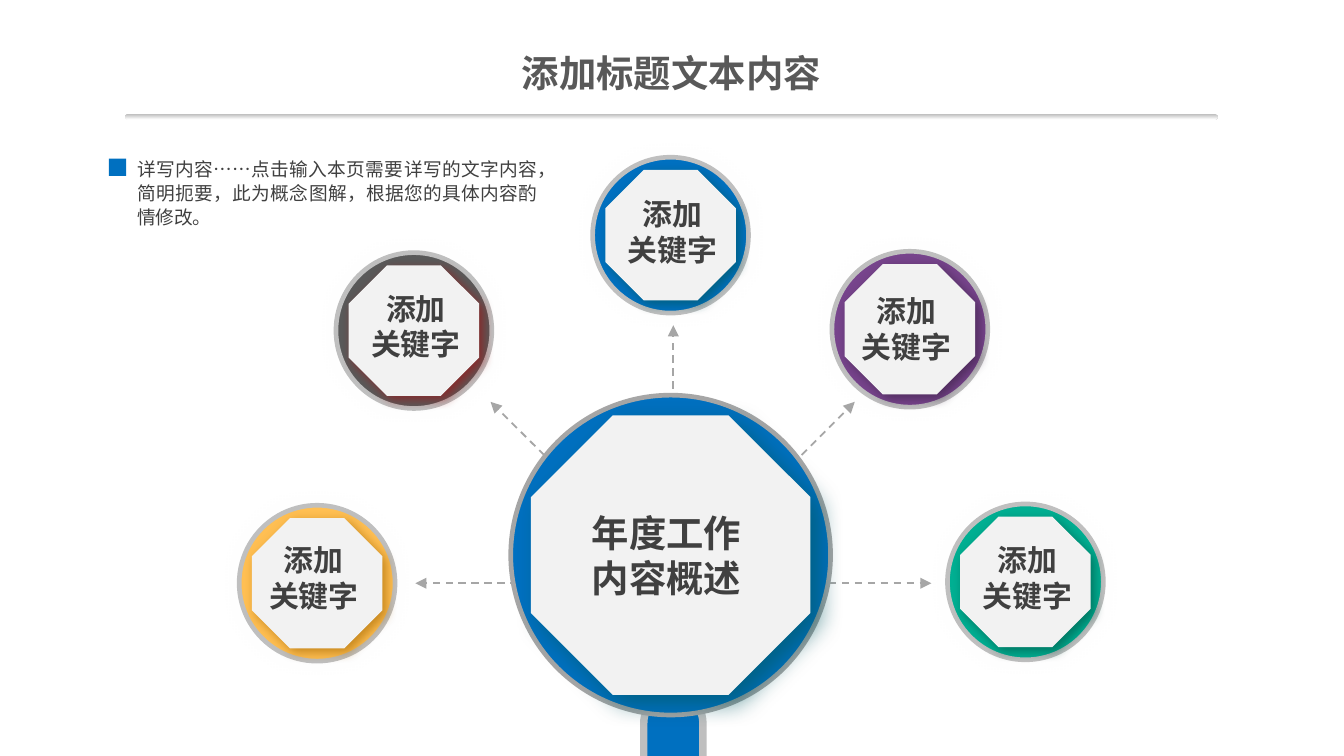
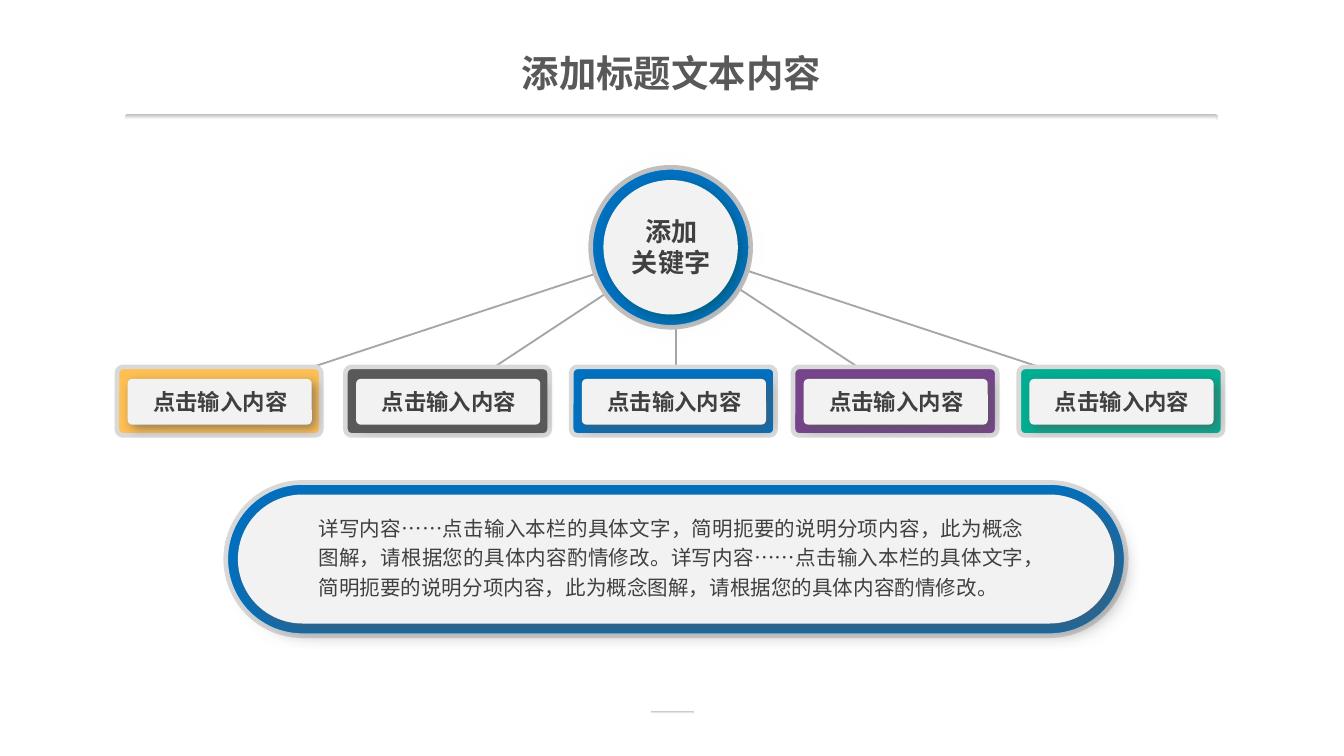
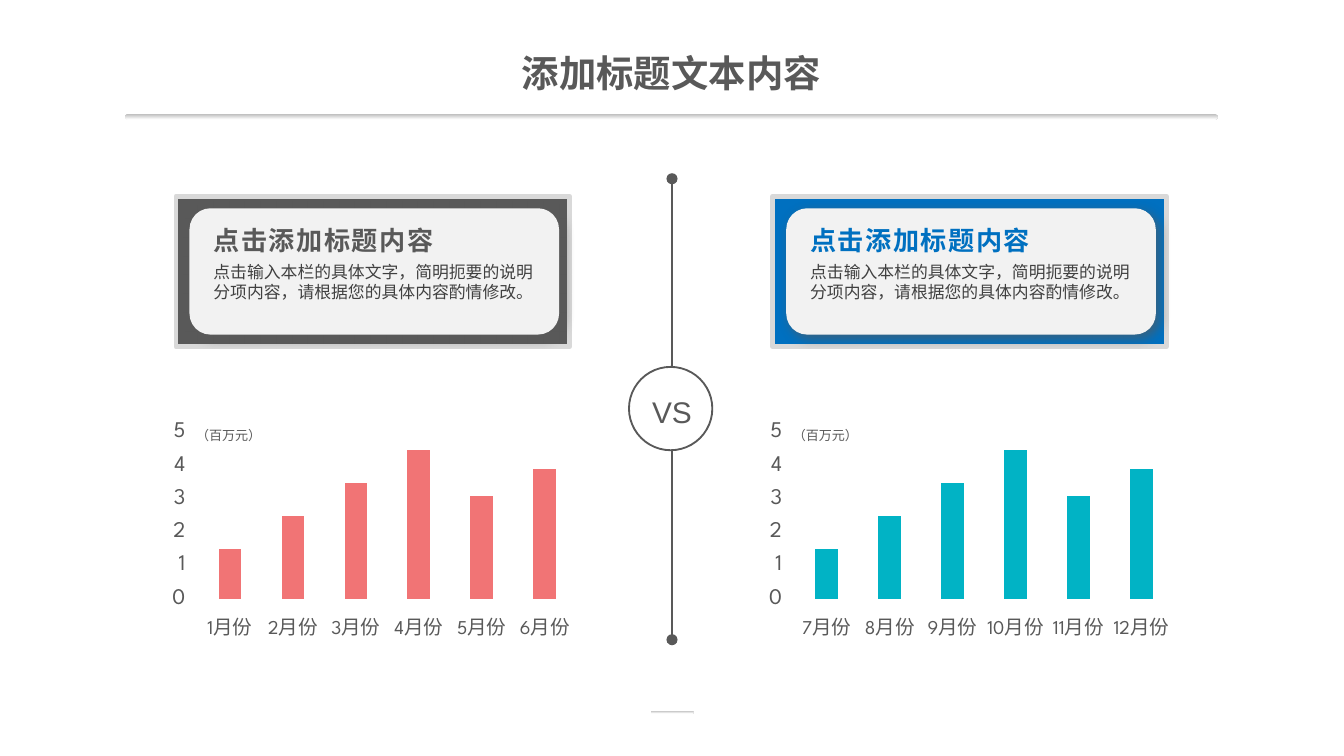
from lxml import etree
from pptx import Presentation
from pptx.chart.data import CategoryChartData
from pptx.dml.color import RGBColor
from pptx.enum.chart import XL_CHART_TYPE
from pptx.enum.dml import MSO_LINE
from pptx.enum.shapes import MSO_CONNECTOR, MSO_SHAPE
from pptx.enum.text import MSO_ANCHOR, MSO_AUTO_SIZE, PP_ALIGN
from pptx.oxml.ns import qn
from pptx.util import Inches, Pt

OVAL, OCTAGON = MSO_SHAPE.OVAL, MSO_SHAPE.OCTAGON
RECT, ROUND = MSO_SHAPE.RECTANGLE, MSO_SHAPE.ROUNDED_RECTANGLE
LEFT, CENTER, JUSTIFY = PP_ALIGN.LEFT, PP_ALIGN.CENTER, PP_ALIGN.JUSTIFY
TOP, MIDDLE = MSO_ANCHOR.TOP, MSO_ANCHOR.MIDDLE
STRAIGHT = MSO_CONNECTOR.STRAIGHT
DASH = MSO_LINE.DASH
COLUMN = XL_CHART_TYPE.COLUMN_CLUSTERED

WHITE = RGBColor(0xFF, 0xFF, 0xFF)
PAPER = RGBColor(0xF2, 0xF2, 0xF2)
PALE = RGBColor(0xD9, 0xD9, 0xD9)
SILVER = RGBColor(0xBF, 0xBF, 0xBF)
GREY = RGBColor(0xA6, 0xA6, 0xA6)
DARK = RGBColor(0x59, 0x59, 0x59)
INK = RGBColor(0x40, 0x40, 0x40)
BLUE = RGBColor(0x00, 0x70, 0xC0)
AMBER = RGBColor(0xFF, 0xBF, 0x53)
PURPLE = RGBColor(0x77, 0x44, 0x8C)
GREEN = RGBColor(0x00, 0xAF, 0x92)
CORAL = RGBColor(0xF1, 0x74, 0x75)
CYAN = RGBColor(0x01, 0xB3, 0xC5)
NAVY_SHADE = RGBColor(0x00, 0x59, 0x62)
AMBER_SHADE = RGBColor(0xA9, 0x6A, 0x00)
RED_SHADE = RGBColor(0xA2, 0x10, 0x11)
PURPLE_SHADE = RGBColor(0x3C, 0x22, 0x46)
GREEN_SHADE = RGBColor(0x00, 0x58, 0x49)
FADE_OUT = [SILVER, WHITE]
FADE_IN = [WHITE, SILVER]
CJK, LATIN, DIGITS = "Noto Sans CJK SC", "Arial", "League Spartan"


def add_shape(s, kind, x, y, w, h, fill, line=None, width=2.5, adj=None, shade=None, blur=6, soft=None):
    sp = s.shapes.add_shape(kind, Inches(x), Inches(y), Inches(w), Inches(h))
    sp.shadow.inherit = False
    if adj is not None:
        sp.adjustments[0] = adj
    if fill is None:
        sp.fill.background()
    elif isinstance(fill, list):
        sp.fill.gradient()
        sp.fill.gradient_angle = 270
        for stop, color in zip(sp.fill.gradient_stops, fill):
            stop.color.rgb = color
    else:
        sp.fill.solid()
        sp.fill.fore_color.rgb = fill
    if line is None:
        sp.line.fill.background()
    else:
        sp.line.color.rgb = line
        sp.line.width = Pt(width)
    effects = sp._element.spPr.find(qn("a:effectLst"))
    if shade is not None:
        outer = etree.SubElement(effects, qn("a:outerShdw"), blurRad=str(Pt(blur)),
                                 dist=str(Pt(blur / 2)), dir="2700000", algn="tl", rotWithShape="0")
        color = etree.SubElement(outer, qn("a:srgbClr"), val=str(shade))
        etree.SubElement(color, qn("a:alpha"), val="64000")
    if soft is not None:
        etree.SubElement(effects, qn("a:softEdge"), rad=str(Inches(soft)))
    return sp


def set_text(sp, lines, size, color=INK, font=CJK, bold=False, align=CENTER, anchor=TOP,
             inset=(0.1, 0.05), spacing=None, tracking=None):
    tf = sp.text_frame
    tf.word_wrap = True
    tf.auto_size = MSO_AUTO_SIZE.NONE
    tf.vertical_anchor = anchor
    tf.margin_left = tf.margin_right = Inches(inset[0])
    tf.margin_top = tf.margin_bottom = Inches(inset[1])
    tf.text = lines
    for p in tf.paragraphs:
        p.alignment = align
        if spacing is not None:
            p.line_spacing = spacing
        p.font.size = Pt(size)
        p.font.bold = bold
        p.font.name = font
        p.font.color.rgb = color
        props = p._p.pPr.find(qn("a:defRPr"))
        etree.SubElement(props, qn("a:ea"), typeface=CJK)
        if tracking is not None:
            props.set("spc", str(tracking))


prs = Presentation()
prs.slide_width = Inches(10)
prs.slide_height = prs.slide_width * 9 // 16

slides = []
for i in range(3):
    s = prs.slides.add_slide(prs.slide_layouts[5])
    slides.append(s)
    title = s.shapes.title
    title.left, title.top, title.width, title.height = Inches(3.07), Inches(0.33), Inches(3.85), Inches(0.41)
    set_text(title, "添加标题文本内容", 20, DARK, LATIN, True, inset=(0.07, 0.04))
    add_shape(s, ROUND, 0.93, 0.85, 8.13, 0.04, FADE_OUT, adj=0.5)
    if i > 0:
        add_shape(s, ROUND, 4.84, 5.29, 0.32, 0.02, FADE_OUT, adj=0.5)
overview, tree, versus = slides

lines = [(overview, 5.01, 4.34, x, y, GREY, DASH, "triangle")
         for x, y in [(3.09, 4.34), (6.93, 4.34), (5.01, 2.42), (3.65, 2.99), (6.36, 2.99)]]
lines += [(tree, 5.03, 1.84, 1.63 + 1.7 * i, 2.96, GREY, None, None) for i in range(5)]
lines += [(versus, 5, y1, 5, y2, DARK, None, "oval") for y1, y2 in [(2.73, 1.33), (3.35, 4.76)]]
for s, x1, y1, x2, y2, color, dash, tail in lines:
    line = s.shapes.add_connector(STRAIGHT, Inches(x1), Inches(y1), Inches(x2), Inches(y2))
    line.line.color.rgb = color
    line.line.width = Pt(1)
    if dash:
        line.line.dash_style = dash
    if tail:
        etree.SubElement(line.line._get_or_add_ln(), qn("a:tailEnd"), type=tail)
    etree.SubElement(line._element.spPr, qn("a:effectLst"))

discs = [
    (overview, 2.36, 4.34, AMBER, AMBER_SHADE, 1.85, 3.97),
    (overview, 3.08, 2.46, DARK, RED_SHADE, 2.61, 2.1),
    (overview, 4.99, 1.75, BLUE, NAVY_SHADE, 4.52, 1.4),
    (overview, 6.77, 2.45, PURPLE, PURPLE_SHADE, 6.26, 2.12),
    (overview, 7.63, 4.33, GREEN, GREEN_SHADE, 7.16, 3.97),
    (tree, 4.99, 1.84, BLUE, NAVY_SHADE, 4.51, 1.54),
]
for s, cx, cy, color, shade, label_x, label_y in discs:
    halo, ring, core, kind, size = (1.6, 1.16, 0.97, OCTAGON, 16) if s is overview else (1.65, 1.19, 1, OVAL, 14)
    add_shape(s, OVAL, cx - halo / 2, cy - halo / 2, halo, halo, FADE_IN, soft=0.35)
    add_shape(s, OVAL, cx - ring / 2, cy - ring / 2, ring, ring, color, SILVER)
    add_shape(s, kind, cx - core / 2, cy - core / 2, core, core, PAPER, shade=shade)
    label = s.shapes.add_textbox(Inches(label_x), Inches(label_y), Inches(0.97), Inches(0.66))
    set_text(label, "添加\n关键字", size, bold=True, inset=(0.1, 0.06))

handle = add_shape(overview, ROUND, 4.45, 5.5, 1.12, 0.44, BLUE, SILVER, 4, 0.5)
handle.rotation = 90
add_shape(overview, OVAL, 3.8, 2.94, 2.38, 2.38, BLUE, GREY)
add_shape(overview, OCTAGON, 3.95, 3.09, 2.08, 2.08, PAPER, shade=NAVY_SHADE, blur=13)
center = overview.shapes.add_textbox(Inches(4.07), Inches(3.75), Inches(1.78), Inches(0.77))
set_text(center, "年度工作\n内容概述", 20, bold=True)
add_shape(overview, RECT, 0.81, 1.18, 0.13, 0.13, BLUE)
note = overview.shapes.add_textbox(Inches(1.02), Inches(1.16), Inches(2.98), Inches(0.55))
set_text(note, "详写内容……点击输入本页需要详写的文字内容，简明扼要，此为概念图解，根据您的具体内容酌情修改。",
         10, align=JUSTIFY, inset=(0, 0), spacing=Pt(13))

cards = [(0.87, AMBER), (2.57, DARK), (4.25, BLUE), (5.9, PURPLE), (7.58, GREEN)]
for left, color in cards:
    add_shape(tree, ROUND, left, 2.73, 1.52, 0.51, color, PALE, adj=0.09)
    add_shape(tree, ROUND, left + 0.08, 2.82, 1.37, 0.34, PAPER, adj=0.1, shade=DARK)
    label = tree.shapes.add_textbox(Inches(left), Inches(2.83), Inches(1.54), Inches(0.34))
    set_text(label, "点击输入内容", 12, bold=True, anchor=MIDDLE, inset=(0, 0), spacing=0.9)
add_shape(tree, ROUND, 1.68, 3.59, 6.7, 1.14, BLUE, PALE, adj=0.5)
add_shape(tree, ROUND, 1.77, 3.68, 6.52, 0.96, PAPER, adj=0.5, shade=DARK, blur=10)
detail = tree.shapes.add_textbox(Inches(2.37), Inches(3.82), Inches(5.25), Inches(0.62))
set_text(detail, "详写内容……点击输入本栏的具体文字，简明扼要的说明分项内容，此为概念图解，请根据您的具体内容酌情修改。" * 2,
         11, align=JUSTIFY, anchor=MIDDLE, inset=(0, 0), spacing=1.2)

add_shape(versus, OVAL, 4.68, 2.73, 0.62, 0.62, None, DARK, 1)
label = versus.shapes.add_textbox(Inches(4.75), Inches(2.88), Inches(0.5), Inches(0.37))
set_text(label, "VS", 16, DARK, LATIN, inset=(0.05, 0.05))

for left, first_month, color, bar_color in [(1.31, 1, DARK, CORAL), (5.75, 7, BLUE, CYAN)]:
    add_shape(versus, ROUND, left, 1.46, 2.93, 1.12, color, PALE, adj=0)
    add_shape(versus, ROUND, left + 0.1, 1.55, 2.75, 0.94, PAPER, shade=DARK)
    body = versus.shapes.add_textbox(Inches(left + 0.18), Inches(1.9), Inches(2.6), Inches(0.4))
    set_text(body, "点击输入本栏的具体文字，简明扼要的说明分项内容，请根据您的具体内容酌情修改。", 9, align=LEFT)
    heading = versus.shapes.add_textbox(Inches(left + 0.18), Inches(1.62), Inches(1.93), Inches(0.34))
    set_text(heading, "点击添加标题内容", 14, color, LATIN, True, LEFT, tracking=80)

    data = CategoryChartData()
    data.categories = [f"{month}月份" for month in range(first_month, first_month + 6)]
    data.add_series("Series 1", [1.5, 2.5, 3.5, 4.5, 3.1, 3.9])
    chart = versus.shapes.add_chart(COLUMN, Inches(left - 0.09), Inches(3.11), Inches(3.13), Inches(1.69), data).chart
    chart.has_legend = False
    chart.has_title = False
    chart.font.size = Pt(10)
    plot = chart.plots[0]
    plot.gap_width = 175
    plot.overlap = -27
    plot.vary_by_categories = False
    fill = plot.series[0].format.fill
    fill.solid()
    fill.fore_color.rgb = bar_color
    for axis, size in [(chart.category_axis, 10.5), (chart.value_axis, 12)]:
        axis.has_major_gridlines = False
        axis.format.line.fill.background()
        font = axis.tick_labels.font
        font.size = Pt(size)
        font.name = DIGITS
        font.color.rgb = DARK
    chart.value_axis.minimum_scale = 0
    chart.value_axis.maximum_scale = 5
    chart.value_axis.major_unit = 1
    unit = versus.shapes.add_textbox(Inches(left + 0.08), Inches(3.14), Inches(0.73), Inches(0.19))
    set_text(unit, "（百万元）", 7, DARK, LATIN, align=LEFT, inset=(0.07, 0.04))

prs.save("out.pptx")
